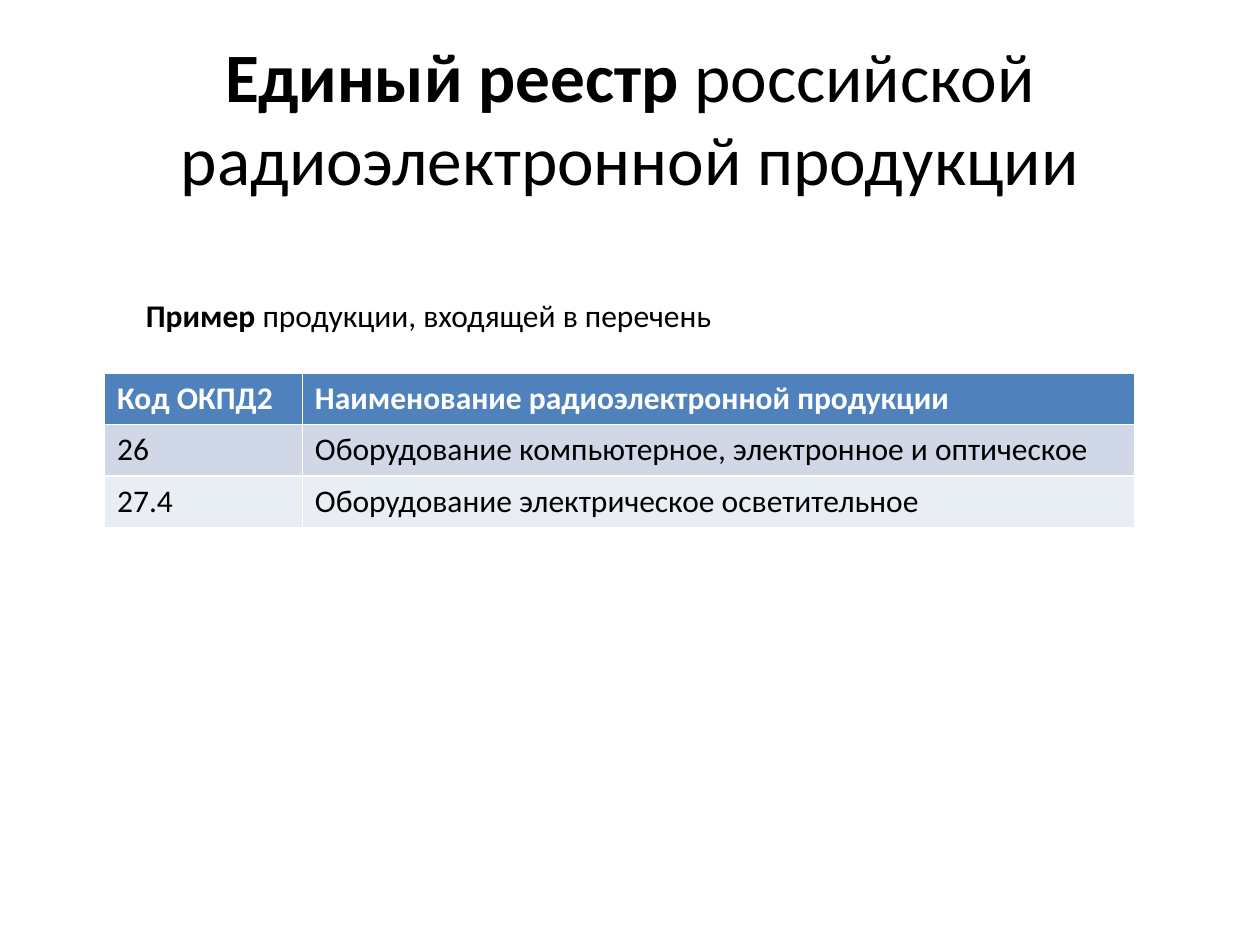
import pptx
import pptx.util
import pptx.dml.color
import pptx.enum.text
from pptx.util import Inches

FONT = "Calibri"
BLACK, WHITE = "000000", "FFFFFF"
HEADER_FILL = "4F81BD"
BAND_FILLS = ["D0D8E8", "E9EDF4"]
PRODUCTS = [
    ("Код ОКПД2", "Наименование радиоэлектронной продукции"),
    ("26", "Оборудование компьютерное, электронное и оптическое"),
    ("27.4", "Оборудование электрическое осветительное"),
]
COLUMN_WIDTHS = [1.57, 6.61]
ROW_HEIGHT = 0.41


def rgb(hex_color):
    return pptx.dml.color.RGBColor.from_string(hex_color)


def format_run(run, size, color, bold):
    run.font.name = FONT
    run.font.size = pptx.util.Pt(size)
    run.font.bold = bold
    run.font.color.rgb = rgb(color)


def write_lead(paragraph, lead, rest, size):
    for text, bold in ((lead, True), (rest, False)):
        run = paragraph.add_run()
        run.text = text
        format_run(run, size, BLACK, bold)


def add_title(slide):
    title = slide.shapes.title
    title.left, title.top = Inches(0.5), Inches(0.3)
    title.width, title.height = Inches(9), Inches(1.25)
    frame = title.text_frame
    frame.word_wrap = True
    frame.vertical_anchor = pptx.enum.text.MSO_ANCHOR.MIDDLE
    heading = frame.paragraphs[0]
    heading.alignment = pptx.enum.text.PP_ALIGN.CENTER
    write_lead(heading, "Единый реестр ", "российской радиоэлектронной продукции", 39.6)


def add_product_table(slide):
    table = slide.shapes.add_table(
        len(PRODUCTS), len(COLUMN_WIDTHS), Inches(0.83), Inches(2.96),
        Inches(sum(COLUMN_WIDTHS)), Inches(ROW_HEIGHT * len(PRODUCTS))).table
    for column, width in zip(table.columns, COLUMN_WIDTHS):
        column.width = Inches(width)
    for index, (row, texts) in enumerate(zip(table.rows, PRODUCTS)):
        row.height = Inches(ROW_HEIGHT)
        header = index == 0
        fill = HEADER_FILL if header else BAND_FILLS[(index - 1) % 2]
        for cell, text in zip(row.cells, texts):
            cell.fill.solid()
            cell.fill.fore_color.rgb = rgb(fill)
            cell.text_frame.text = text
            run = cell.text_frame.paragraphs[0].runs[0]
            format_run(run, 18, WHITE if header else BLACK, header)


def add_caption(slide):
    caption = slide.shapes.add_textbox(Inches(1.06), Inches(2.3), Inches(4.72), Inches(0.4))
    frame = caption.text_frame
    frame.word_wrap = False
    frame.auto_size = pptx.enum.text.MSO_AUTO_SIZE.SHAPE_TO_FIT_TEXT
    write_lead(frame.paragraphs[0], "Пример", " продукции, входящей в перечень", 18)


def main():
    presentation = pptx.Presentation()
    presentation.slide_width = Inches(10)
    presentation.slide_height = Inches(7.5)
    slide = presentation.slides.add_slide(presentation.slide_layouts[5])
    add_title(slide)
    add_product_table(slide)
    add_caption(slide)
    presentation.save("out.pptx")


if __name__ == "__main__":
    main()
